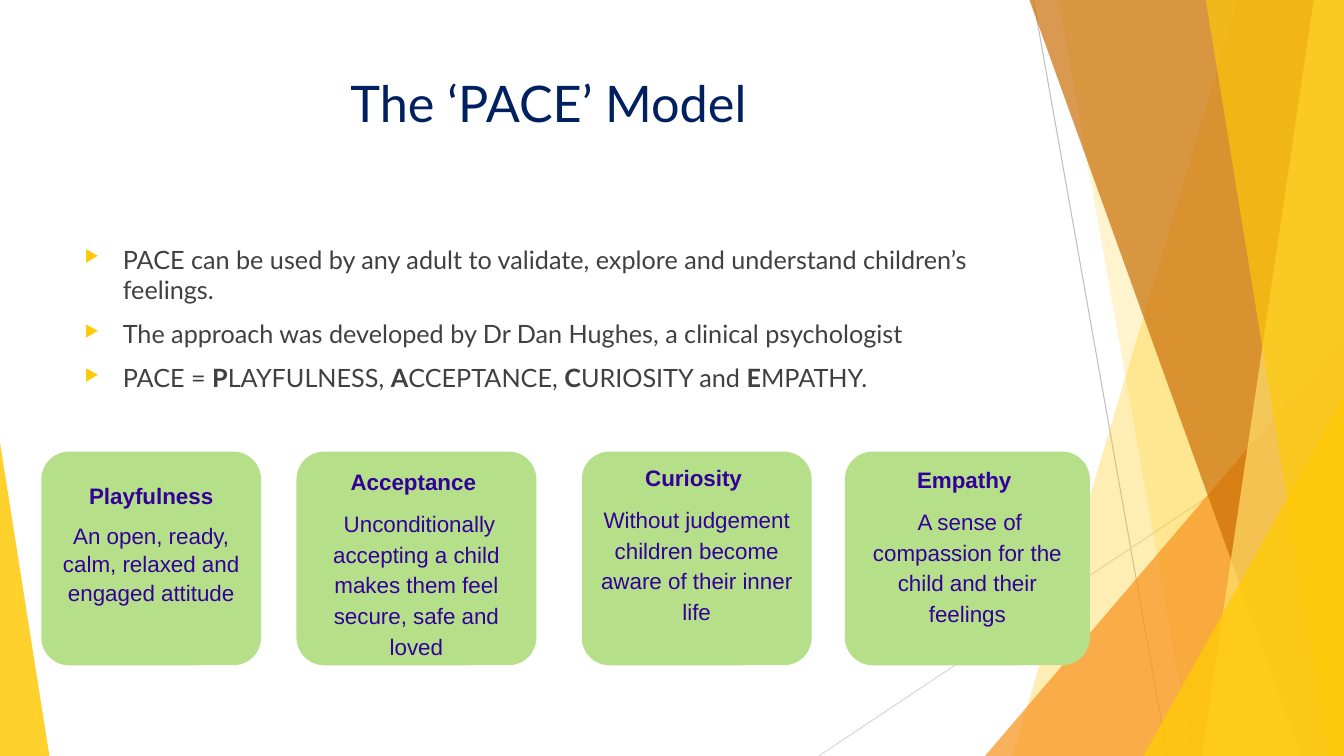
import pptx
import pptx.util
import pptx.dml.color
import pptx.enum.shapes
import pptx.enum.text
import pptx.oxml
import pptx.oxml.ns

WIDTH, HEIGHT = 13.33, 7.5
COLORS = {
    "gold": "FFCA08", "pale gold": "FFDF6B", "orange": "F8931D", "brown": "CA6F06",
    "grey": "BFBFBF", "light grey": "D9D9D9", "navy": "002060", "body": "404040",
    "card": "B6DF89", "purple": "330099",
}
SHAPE = pptx.enum.shapes.MSO_SHAPE
ALIGN = pptx.enum.text.PP_ALIGN
INCH = pptx.util.Inches

# Bands reach the right edge: (top x, bottom x, colour, opacity)
BACK_BANDS = [(12.28, 10.04, "gold", 30), (10.5, 11.83, "gold", 20)]
FRONT_BANDS = [(10.21, 12.91, "brown", 70), (13.03, 11.92, "pale gold", 70),
               (11.96, 13.18, "gold", 65)]
BULLETS = [
    ["PACE can be used by any adult to validate, explore and understand children’s feelings."],
    ["The approach was developed by Dr Dan Hughes, a clinical psychologist"],
    ["PACE = ", "P", "LAYFULNESS, ", "A", "CCEPTANCE, ", "C", "URIOSITY and ", "E", "MPATHY."],
]
# left, width, top inset, line spacing, heading, description
CARDS = [
    (0.41, 2.18, 0.2, 1.07, "Playfulness", "An open, ready, calm, relaxed and engaged attitude"),
    (2.94, 2.38, 0.04, 1.15, "Acceptance ",
     " Unconditionally accepting a child makes them feel secure, safe and loved"),
    (5.77, 2.28, 0, 1.15, "Curiosity ",
     "Without judgement children become aware of their inner life"),
    (8.38, 2.43, 0.02, 1.15, "Empathy ",
     " A sense of compassion for the child and their feelings"),
]


def rgb(color):
    return pptx.dml.color.RGBColor.from_string(COLORS[color])


def add_xml(parent, tag, **attributes):
    child = pptx.oxml.parse_xml(f"<a:{tag} {pptx.oxml.ns.nsdecls('a')}/>")
    for key, value in attributes.items():
        child.set(key, str(value))
    parent.append(child)
    return child


def paint(shape, color, opacity=100):
    shape.shadow.inherit = False
    shape.line.fill.background()
    shape.fill.solid()
    shape.fill.fore_color.rgb = rgb(color)
    if opacity < 100:
        solid = shape.fill._xPr.find(pptx.oxml.ns.qn("a:solidFill"))
        add_xml(solid[0], "alpha", val=opacity * 1000)


def format_frame(frame, **formats):
    for name, value in {"word_wrap": True, **formats}.items():
        setattr(frame, name, value)


def add_run(paragraph, text, font, size, color, bold=False):
    run = paragraph.add_run()
    run.text = text
    formats = {"name": font, "size": pptx.util.Pt(size), "bold": bold}
    for name, value in formats.items():
        setattr(run.font, name, value)
    run.font.color.rgb = rgb(color)


def next_paragraph(frame, index, **formats):
    paragraph = frame.paragraphs[0] if index == 0 else frame.add_paragraph()
    for name, value in formats.items():
        setattr(paragraph, name, value)
    return paragraph


def draw_decoration(slide):
    def hairline(start, end, color):
        line = slide.shapes.add_connector(
            pptx.enum.shapes.MSO_CONNECTOR.STRAIGHT, *map(INCH, start + end))
        line.line.color.rgb = rgb(color)
        line.line.width = pptx.util.Pt(0.75)
        add_xml(line._element.spPr, "effectLst")

    def band(top_x, bottom_x, color, opacity):
        builder = slide.shapes.build_freeform(INCH(top_x), 0, scale=1)
        corners = [(WIDTH, 0), (WIDTH, HEIGHT), (bottom_x, HEIGHT)]
        builder.add_line_segments([(INCH(x), INCH(y)) for x, y in corners])
        paint(builder.convert_to_shape(), color, opacity)

    def corner(left, top, width, apex, color, opacity):
        triangle = slide.shapes.add_shape(
            SHAPE.ISOSCELES_TRIANGLE, INCH(left), INCH(top), INCH(width), INCH(HEIGHT - top))
        triangle.adjustments[0] = apex
        paint(triangle, color, opacity)

    hairline((10.25, 0), (11.58, HEIGHT), "grey")
    hairline((WIDTH, 4.03), (8.12, HEIGHT), "light grey")
    for values in BACK_BANDS:
        band(*values)
    corner(9.77, 3.33, WIDTH - 9.77, 1, "orange", 72)
    for values in FRONT_BANDS:
        band(*values)
    corner(11.34, 3.93, WIDTH - 11.34, 1, "gold", 80)
    corner(0, 4.39, 0.49, 0, "gold", 85)


def draw_title(slide, left, top, width, height):
    frame = slide.shapes.add_textbox(*map(INCH, (left, top, width, height))).text_frame
    format_frame(frame)
    paragraph = next_paragraph(frame, 0, alignment=ALIGN.CENTER)
    add_run(paragraph, "The ‘PACE’ Model", "Lato", 36, "navy")


def draw_bullets(slide, left, top, width, height):
    frame = slide.shapes.add_textbox(*map(INCH, (left, top, width, height))).text_frame
    format_frame(frame)
    for index, parts in enumerate(BULLETS):
        paragraph = next_paragraph(frame, index, space_before=pptx.util.Pt(10 if index else 0))
        properties = paragraph._p.get_or_add_pPr()
        properties.set("marL", str(INCH(0.38)))
        properties.set("indent", str(-INCH(0.38)))
        add_xml(add_xml(properties, "buClr"), "srgbClr", val=COLORS["gold"])
        add_xml(properties, "buSzPct", val=65000)
        add_xml(properties, "buChar", char="▶")
        for position, text in enumerate(parts):
            add_run(paragraph, text, "Lato", 18, "body", bold=position % 2 == 1)


def draw_cards(slide, top, height):
    for left, width, inset, spacing, heading, description in CARDS:
        card = slide.shapes.add_shape(
            SHAPE.ROUNDED_RECTANGLE, *map(INCH, (left, top, width, height)))
        card.adjustments[0] = 0.13
        paint(card, "card")
        format_frame(card.text_frame, vertical_anchor=pptx.enum.text.MSO_ANCHOR.TOP,
                     margin_top=INCH(inset), margin_bottom=0)
        for index, text in enumerate((heading, description)):
            paragraph = next_paragraph(card.text_frame, index, alignment=ALIGN.CENTER,
                                       line_spacing=spacing, space_after=pptx.util.Pt(8))
            add_run(paragraph, text, "Arial", 16, "purple", bold=index == 0)


def main():
    deck = pptx.Presentation()
    deck.slide_width, deck.slide_height = INCH(WIDTH), INCH(HEIGHT)
    slide = deck.slides.add_slide(deck.slide_layouts[6])
    draw_decoration(slide)
    draw_title(slide, 0.74, 0.67, 9.4, 1.44)
    draw_bullets(slide, 0.74, 2.37, 9.4, 1.7)
    draw_cards(slide, 4.48, 2.12)
    deck.save("out.pptx")


if __name__ == "__main__":
    main()
